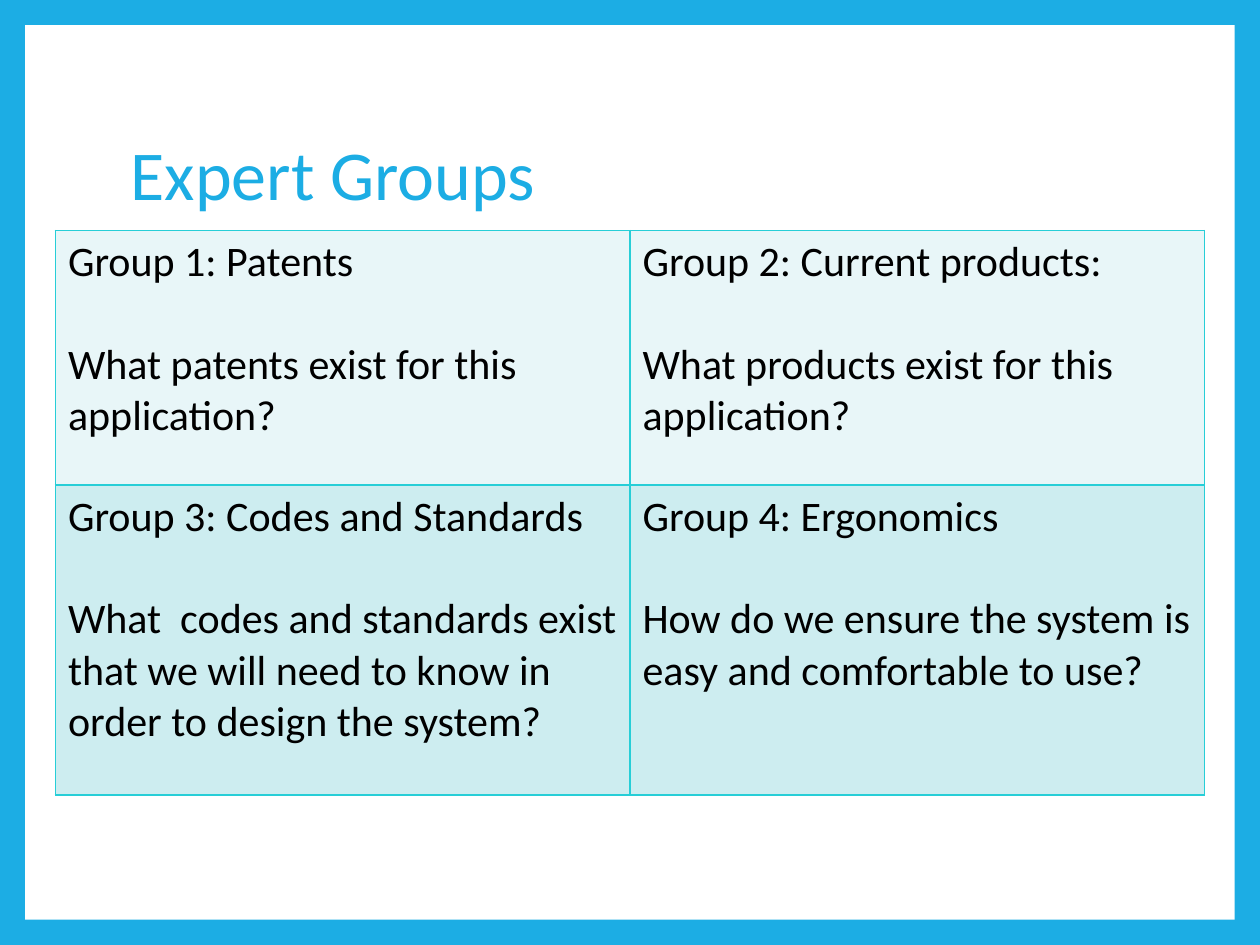
import pptx
import pptx.dml.color
import pptx.enum.shapes
import pptx.enum.text
import pptx.oxml
import pptx.oxml.ns
import pptx.util
from dataclasses import dataclass

Inches = pptx.util.Inches
Pt = pptx.util.Pt


@dataclass(frozen=True)
class Theme:
    font: str = "Calibri"
    accent: str = "1CADE4"
    paper: str = "FFFFFF"
    text: str = "000000"
    border: str = "27CED7"
    row_fills: tuple = ("E8F6F8", "CDEDF0")
    title_size: int = 40
    body_size: int = 24
    question_gap: float = 29.3
    border_width: int = 1


THEME = Theme()

GROUPS = [
    [
        ("Group 1: Patents", "What patents exist for this application?"),
        ("Group 2: Current products:", "What products exist for this application?"),
    ],
    [
        ("Group 3: Codes and Standards",
         "What  codes and standards exist that we will need to know in order to design the system?"),
        ("Group 4: Ergonomics",
         "How do we ensure the system is easy and comfortable to use?"),
    ],
]
ROW_HEIGHTS = (2.02, 2.46)
COLUMN_WIDTH = 4.56


def paint(fill, color):
    fill.solid()
    fill.fore_color.rgb = pptx.dml.color.RGBColor.from_string(color)


def style_text(paragraph, size, color):
    for span in paragraph.runs:
        span.font.name = THEME.font
        span.font.size = Pt(size)
        span.font.color.rgb = pptx.dml.color.RGBColor.from_string(color)


def add_panel(page):
    """Lay the white panel that leaves the background as a frame."""
    panel = page.shapes.add_shape(
        pptx.enum.shapes.MSO_SHAPE.RECTANGLE,
        Inches(0.2), Inches(0.2), Inches(9.6), Inches(7.1))
    panel.shadow.inherit = False
    paint(panel.fill, THEME.paper)
    panel.line.fill.background()


def add_title(page, text):
    box = page.shapes.add_textbox(Inches(0.94), Inches(0.67), Inches(8.1), Inches(1.48))
    frame = box.text_frame
    frame.word_wrap = True
    frame.vertical_anchor = pptx.enum.text.MSO_ANCHOR.MIDDLE
    frame.text = text
    frame.paragraphs[0].line_spacing = 0.9
    style_text(frame.paragraphs[0], THEME.title_size, THEME.accent)


def add_borders(cell):
    properties = cell._tc.get_or_add_tcPr()
    for index, side in enumerate(("lnL", "lnR", "lnT", "lnB")):
        line = pptx.oxml.parse_xml(
            f'<a:{side} {pptx.oxml.ns.nsdecls("a")} w="{Pt(THEME.border_width)}">'
            f'<a:solidFill><a:srgbClr val="{THEME.border}"/></a:solidFill></a:{side}>')
        properties.insert(index, line)


def fill_cell(cell, heading, question, color):
    paint(cell.fill, color)
    add_borders(cell)
    frame = cell.text_frame
    frame.text = f"{heading}\n{question}"
    frame.paragraphs[1].space_before = Pt(THEME.question_gap)
    for paragraph in frame.paragraphs:
        style_text(paragraph, THEME.body_size, THEME.text)


def add_group_table(page):
    columns = len(GROUPS[0])
    table = page.shapes.add_table(
        len(GROUPS), columns, Inches(0.44), Inches(1.83),
        Inches(COLUMN_WIDTH * columns), Inches(sum(ROW_HEIGHTS))).table
    table.first_row = False
    table.horz_banding = False
    for column in table.columns:
        column.width = Inches(COLUMN_WIDTH)
    for row, groups in enumerate(GROUPS):
        table.rows[row].height = Inches(ROW_HEIGHTS[row])
        for column, (heading, question) in enumerate(groups):
            fill_cell(table.cell(row, column), heading, question, THEME.row_fills[row])


def main():
    deck = pptx.Presentation()
    deck.slide_width = Inches(10)
    deck.slide_height = Inches(7.5)
    page = deck.slides.add_slide(deck.slide_layouts[6])
    paint(page.background.fill, THEME.accent)
    add_panel(page)
    add_title(page, "Expert Groups")
    add_group_table(page)
    deck.save("out.pptx")


if __name__ == "__main__":
    main()
